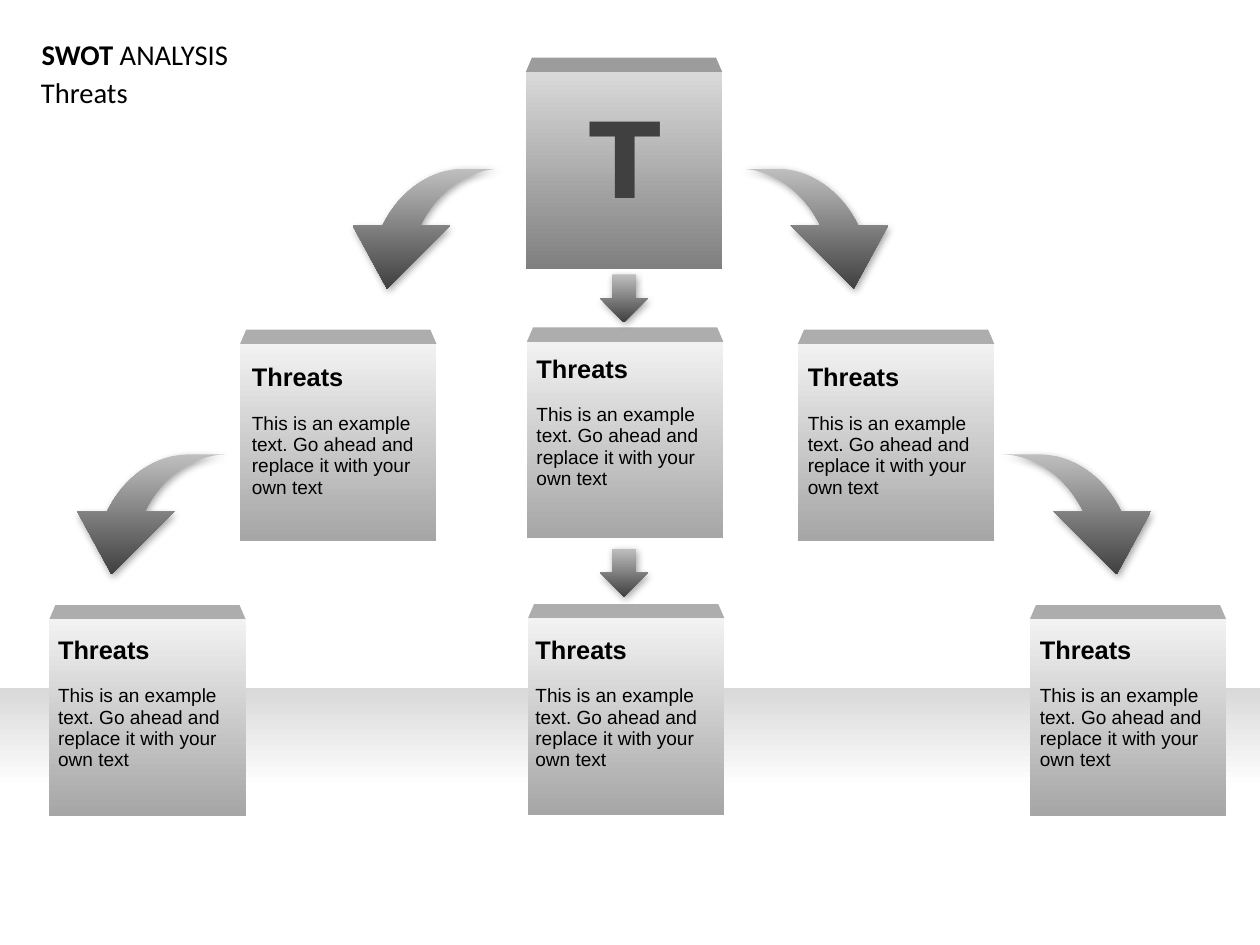
import pptx
import pptx.dml.color
import pptx.enum.shapes
import pptx.enum.text
import pptx.oxml
import pptx.util
from pptx.oxml.ns import nsdecls

Pt = pptx.util.Pt
Kind = pptx.enum.shapes.MSO_SHAPE
Wide, High = 793.75, 595.25
Side = 123.8
Body = "This is an example text. Go ahead and replace it with your own text"


def paint(code):
    return pptx.dml.color.RGBColor.from_string(code)


def bend(a, b, c, d, steps=16):
    for n in range(1, steps + 1):
        t = n / steps
        u = 1 - t
        yield tuple(u**3 * p + 3 * u * u * t * q + 3 * u * t * t * r + t**3 * s
                    for p, q, r, s in zip(a, b, c, d))


class Deck:
    """Holds the style and the current slide, and draws each kind of element."""

    dark = ("BFBFBF", "404040")
    ink = "000000"

    def __init__(self, wide, high):
        self.file = pptx.Presentation()
        self.file.slide_width = Pt(wide)
        self.file.slide_height = Pt(high)
        self.slide = self.file.slides.add_slide(self.file.slide_layouts[5])
        self.shapes = self.slide.shapes

    def plain(self, shape):
        shape.shadow.inherit = False
        shape.line.fill.background()

    def shade(self, shape, tones, ends=(0, 1)):
        self.plain(shape)
        shape.fill.gradient()
        shape.fill.gradient_angle = 270
        for stop, tone, end in zip(shape.fill.gradient_stops, tones, ends):
            stop.color.rgb = paint(tone)
            stop.position = end

    def cast(self, shape):
        glow = pptx.oxml.parse_xml(
            f'<a:outerShdw {nsdecls("a")} blurRad="63500" dist="25400" '
            'dir="3720000" rotWithShape="0"><a:srgbClr val="000000">'
            '<a:alpha val="37000"/></a:srgbClr></a:outerShdw>')
        shape._element.spPr.find(pptx.oxml.ns.qn("a:effectLst")).append(glow)

    def form(self, kind, x, y, w, h):
        return self.shapes.add_shape(kind, Pt(x), Pt(y), Pt(w), Pt(h))

    def band(self, y, w, h):
        self.shade(self.form(Kind.RECTANGLE, 0, y, w, h),
                   ("D9D9D9", "FFFFFF"), (0, 0.39))

    def cube(self, x, y, tones, top):
        lid = self.form(Kind.TRAPEZOID, x, y - 9, Side, 9)
        lid.adjustments[0] = 0.43
        self.plain(lid)
        lid.fill.solid()
        lid.fill.fore_color.rgb = paint(top)
        self.shade(self.form(Kind.RECTANGLE, x, y, Side, Side), tones)

    def drop(self, x, y):
        arrow = self.form(Kind.DOWN_ARROW, x, y, 30.2, 30.2)
        self.shade(arrow, self.dark)
        self.cast(arrow)

    def swoop(self, x, y, way):
        dots = [(51.8, 36), *bend((51.8, 36), (41, 13.7), (20.9, 0), (0, 0)),
                (23.8, 0), *bend((23.8, 0), (44.6, 0), (64.8, 13.7), (75.6, 36)),
                (94.3, 36), (72.7, 75.6), (33.1, 36)]
        spots = [(Pt(x + way * a), Pt(y + b)) for a, b in dots]
        path = self.shapes.build_freeform(*spots[0])
        path.add_line_segments(spots[1:], close=True)
        arrow = path.convert_to_shape()
        self.shade(arrow, self.dark)
        self.cast(arrow)

    def style(self, para, size, face, bold=False, tone=ink):
        para.alignment = pptx.enum.text.PP_ALIGN.LEFT
        para.line_spacing = 0.93
        para.space_before = Pt(0)
        font = para.font
        font.size, font.name, font.bold = Pt(size), face, bold
        font.color.rgb = paint(tone)

    def text(self, x, y, w, h, wrap=True):
        box = self.shapes.add_textbox(Pt(x), Pt(y), Pt(w), Pt(h))
        box.text_frame.word_wrap = wrap
        return box.text_frame

    def label(self, x, y, w, h, words, wrap=True, **look):
        para = self.text(x, y, w, h, wrap).paragraphs[0]
        para.text = words
        self.style(para, **look)

    def note(self, x, y, head, body):
        frame = self.text(x, y, 126, 113)
        first = frame.paragraphs[0]
        first.text = head
        self.style(first, 16, "Arial", True)
        first.space_after = Pt(13.2)
        last = frame.add_paragraph()
        last.text = body
        self.style(last, 12, "Arial")

    def title(self, x, y, w, h, bold, rest):
        shape = self.shapes.title
        shape.left, shape.top, shape.width, shape.height = map(Pt, (x, y, w, h))
        frame = shape.text_frame
        frame.word_wrap = False
        frame.auto_size = pptx.enum.text.MSO_AUTO_SIZE.NONE
        frame.vertical_anchor = pptx.enum.text.MSO_ANCHOR.TOP
        para = frame.paragraphs[0]
        self.style(para, 18, "Calibri")
        for words, heavy in ((bold, True), (rest, False)):
            run = para.add_run()
            run.text = words
            run.font.bold = heavy


def main():
    deck = Deck(Wide, High)
    deck.title(19, 21.6, 133.2, 28.1, "SWOT ", "ANALYSIS")
    deck.label(18.7, 45.4, 69.8, 28.1, "Threats", False, size=18, face="Calibri")
    deck.band(433.4, Wide, 161.3)

    deck.cube(331.2, 45.4, ("D9D9D9", "808080"), "9C9C9C")
    deck.label(364.3, 62.6, 64.1, 81.4, "T",
               size=66, face="DejaVu Sans", bold=True, tone="404040")

    cards = [
        (151.2, 216.7, 151.6, 225.8),
        (331.9, 215.3, 330.9, 220.3),
        (502.6, 216.7, 501.8, 225.8),
        (31, 390.2, 29.5, 397.4),
        (332.6, 389.5, 330.2, 397.4),
        (648.7, 390.2, 648, 397.4),
    ]
    for x, y, left, top in cards:
        deck.cube(x, y, ("F2F2F2", "A6A6A6"), "ADADAD")
        deck.note(left, top, "Threats", Body)

    for y, left, right in ((106.2, 316.5, 465.1), (286.2, 143, 630.7)):
        deck.swoop(left, y, -1)
        deck.swoop(right, y, 1)
    for y in (172.8, 345.6):
        deck.drop(378, y)

    deck.file.save("out.pptx")


if __name__ == "__main__":
    main()
